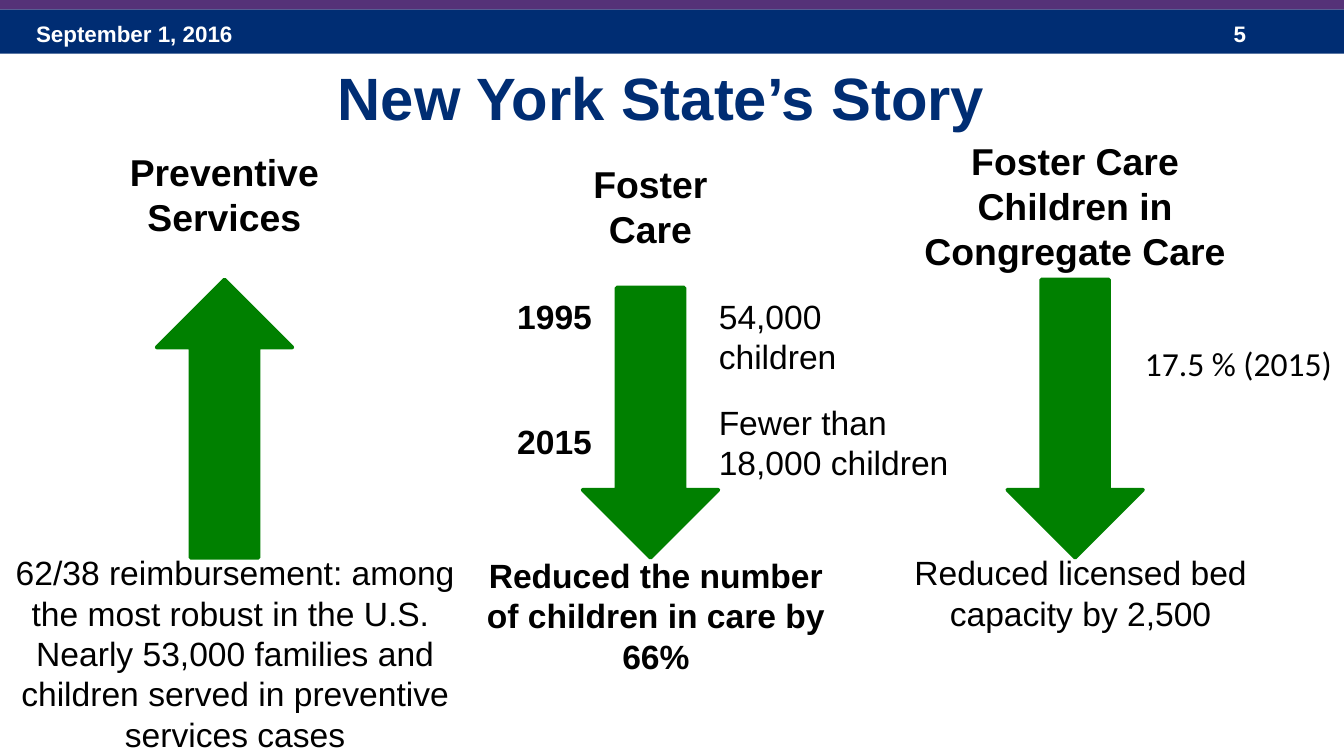
from pptx import Presentation
from pptx.dml.color import RGBColor
from pptx.enum.shapes import MSO_SHAPE
from pptx.enum.text import MSO_ANCHOR, PP_ALIGN
from pptx.util import Inches, Pt

RECTANGLE, DOWN_ARROW = MSO_SHAPE.RECTANGLE, MSO_SHAPE.DOWN_ARROW
LEFT, CENTER = PP_ALIGN.LEFT, PP_ALIGN.CENTER
TOP = MSO_ANCHOR.TOP
TITLE_ONLY = 5
WIDTH = 10
HEIGHT = WIDTH * 9 / 16
NAVY, PURPLE, GREEN = "002D73", "553278", "008000"
BLACK, WHITE = "000000", "FFFFFF"
ARROW_WIDTH, ARROW_END = 1.01, 4.15
PREVENTIVE, FOSTER, CONGREGATE = 1.67, 4.84, 8
YEAR_LEFT, COUNT_LEFT = 3.75, 5.25


def color(hex_code):
    """Turn a hex string into a colour."""
    return RGBColor.from_string(hex_code)


def write(frame, text, size, ink=BLACK, bold=False, align=LEFT, font="Arial"):
    """Fill a text frame and format every run."""
    frame.text = text
    frame.vertical_anchor = TOP
    for paragraph in frame.paragraphs:
        paragraph.alignment = align
        paragraph.space_before = Pt(0)
        for run in paragraph.runs:
            run.font.name, run.font.size, run.font.bold = font, Pt(size), bold
            run.font.color.rgb = color(ink)


def add_label(slide, text, left, top, width, height, size=18, wrap=True, **style):
    """Add a text box."""
    box = slide.shapes.add_textbox(*map(Inches, (left, top, width, height)))
    box.text_frame.word_wrap = wrap
    write(box.text_frame, text, size, **style)


def add_centered(slide, text, center, top, width, height, **style):
    """Add a text box centred on a column."""
    add_label(slide, text, center - width / 2, top, width, height, align=CENTER, **style)


def add_filled(slide, kind, left, top, width, height, fill):
    """Add a plain filled shape without a line."""
    shape = slide.shapes.add_shape(kind, *map(Inches, (left, top, width, height)))
    shape.shadow.inherit = False
    shape.fill.solid()
    shape.fill.fore_color.rgb = color(fill)
    shape.line.fill.background()
    return shape


def add_trend(slide, center, top, rotation=0):
    """Add a green trend arrow that ends on the common base line."""
    arrow = add_filled(slide, DOWN_ARROW, center - ARROW_WIDTH / 2, top,
                       ARROW_WIDTH, ARROW_END - top, GREEN)
    arrow.rotation = rotation
    arrow.line.color.rgb = color(GREEN)
    arrow.line.width = Pt(2)


def add_header(slide):
    """Add the bands, date, slide number and title."""
    add_filled(slide, RECTANGLE, 0, 0.07, WIDTH, 0.33, NAVY)
    for text, left, width in (("September 1, 2016", 0.17, 2.33), ("5", 9.08, 0.75)):
        add_label(slide, text, left, 0.1, width, 0.3, size=12, ink=WHITE, bold=True)
    add_filled(slide, RECTANGLE, 0, -0.02, WIDTH, 0.09, PURPLE)
    title = slide.shapes.title
    title.left, title.top, title.width, title.height = map(Inches, (0.17, 0.4, 9.5, 0.7))
    write(title.text_frame, "New York State’s Story", 32, NAVY, True, CENTER)


def main():
    """Build the slide and save it."""
    deck = Presentation()
    deck.slide_width, deck.slide_height = Inches(WIDTH), Inches(HEIGHT)
    slide = deck.slides.add_slide(deck.slide_layouts[TITLE_ONLY])
    add_header(slide)

    for center, top, rotation in ((FOSTER, 2.14, 0), (PREVENTIVE, 2.08, 180), (CONGREGATE, 2.08, 0)):
        add_trend(slide, center, top, rotation)

    for text, center, top, width, height in (
        ("Foster\nCare", FOSTER, 1.15, 1.83, 0.77),
        ("Preventive Services", PREVENTIVE, 1.06, 1.83, 0.8),
        ("Foster Care Children in Congregate Care", CONGREGATE, 0.98, 2.67, 1.11),
    ):
        add_centered(slide, text, center, top, width, height, size=20, bold=True)

    add_centered(slide, "Reduced the number of children in care by 66%",
                 4.88, 4.08, 2.92, 1.01, bold=True)
    add_centered(slide, "Reduced licensed bed capacity by 2,500", 8.04, 4.06, 2.92, 0.71)
    add_centered(slide, "62/38 reimbursement: among the most robust in the U.S. \n"
                 "Nearly 53,000 families and children served in preventive services cases",
                 1.75, 4.06, 3.5, 1.62)

    for year, year_top, count, count_top, width in (
        ("1995", 2.15, "54,000 children", 2.15, 1.58),
        ("2015", 3.08, "Fewer than 18,000 children", 2.94, 2),
    ):
        add_label(slide, year, YEAR_LEFT, year_top, 0.83, 0.4, bold=True)
        add_label(slide, count, COUNT_LEFT, count_top, width, 0.71)
    add_label(slide, "17.5 % (2015)", 8.42, 2.5, 1.67, 0.4, wrap=False, font="Calibri")

    deck.save("out.pptx")


if __name__ == "__main__":
    main()
